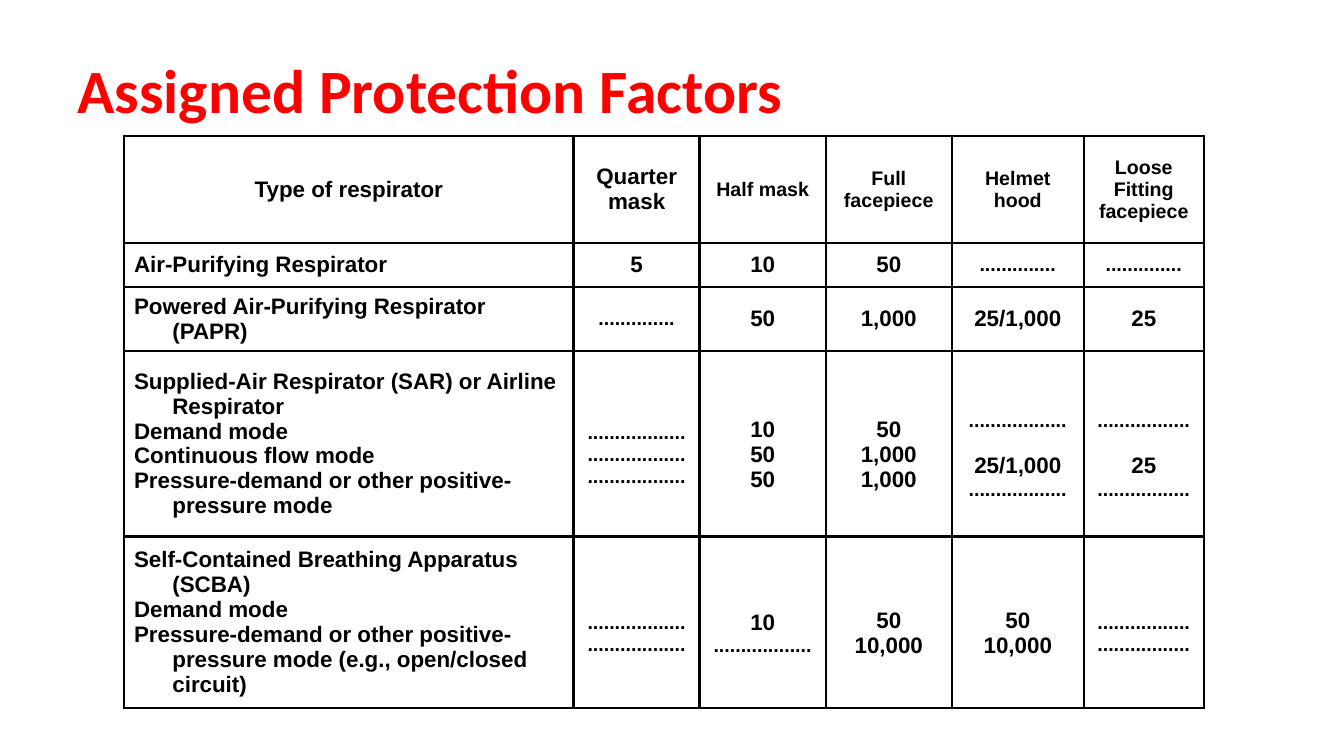
from pptx import Presentation
from pptx.dml.color import RGBColor
from pptx.enum.text import MSO_ANCHOR as Anchor, PP_ALIGN as Align
from pptx.oxml import parse_xml
from pptx.oxml.ns import nsdecls
from pptx.util import Inches, Pt

# Content: the lines of a cell are parted by "\n", an empty line is a gap
TITLE = "Assigned Protection Factors"
HEADERS = ["Type of respirator", "Quarter\nmask", "Half mask", "Full\nfacepiece",
           "Helmet\nhood", "Loose\nFitting\nfacepiece"]
SHORT, MEDIUM, LONG = "." * 14, "." * 17, "." * 18
RESPIRATORS = [
    ["Air-Purifying Respirator", "5", "10", "50", SHORT, SHORT],
    ["Powered Air-Purifying Respirator (PAPR)", SHORT, "50", "1,000", "25/1,000", "25"],
    ["Supplied-Air Respirator (SAR) or Airline Respirator\nDemand mode\n"
     "Continuous flow mode\nPressure-demand or other positive-pressure mode",
     f"{LONG}\n{LONG}\n{LONG}", "10\n50\n50", "50\n1,000\n1,000",
     f"{LONG}\n\n25/1,000\n{LONG}", f"{MEDIUM}\n\n25\n{MEDIUM}"],
    ["Self-Contained Breathing Apparatus (SCBA)\nDemand mode\n"
     "Pressure-demand or other positive-pressure mode (e.g., open/closed circuit)",
     f"{LONG}\n{LONG}", f"10\n{LONG}", "50\n10,000", "50\n10,000",
     f"{MEDIUM}\n{MEDIUM}"],
]

COLORS = {"title": "FF0000", "text": "000000", "border": "000000", "cell": "FFFFFF"}
COLUMN_WIDTHS = [4.46, 1.25, 1.25, 1.25, 1.31, 1.19]
ROW_HEIGHTS = [1.06, 0.44, 0.61, 1.84, 1.66]
TABLE_LEFT, TABLE_TOP = 1.23, 1.35
LINE_GAP = 0.22  # height of one line of small text
HANGING = 0.38
LARGE, SMALL = 16, 14


def write(frame, text, size_of, font="Arial", color="text", align=Align.LEFT,
          hanging=0, spacing=None):
    """Fill a text frame, one paragraph a line; size_of gives a line's size."""
    frame.word_wrap = True
    paragraph, gap = frame.paragraphs[0], 0
    for number, line in enumerate(text.split("\n")):
        if not line:
            gap += LINE_GAP
            continue
        if number:
            paragraph = frame.add_paragraph()
        paragraph.alignment = align
        paragraph.line_spacing = spacing
        if gap:
            paragraph.space_before = Inches(gap)
            gap = 0
        if hanging:
            properties = paragraph._p.get_or_add_pPr()
            properties.set("marL", str(Inches(hanging)))
            properties.set("indent", str(-Inches(hanging)))
        run = paragraph.add_run()
        run.text = line
        run.font.name, run.font.size, run.font.bold = font, Pt(size_of(line)), True
        run.font.color.rgb = RGBColor.from_string(COLORS[color])


def style_cell(cell):
    properties = cell._tc.get_or_add_tcPr()
    for side in "LRTB":
        properties.append(parse_xml(
            f'<a:ln{side} {nsdecls("a")} w="{Pt(2)}"><a:solidFill>'
            f'<a:srgbClr val="{COLORS["border"]}"/></a:solidFill></a:ln{side}>'))
    cell.fill.solid()
    cell.fill.fore_color.rgb = RGBColor.from_string(COLORS["cell"])
    cell.vertical_anchor = Anchor.MIDDLE


def main():
    presentation = Presentation()
    presentation.slide_width, presentation.slide_height = Inches(13.33), Inches(7.5)
    slide = presentation.slides.add_slide(presentation.slide_layouts[6])

    # Title
    title = slide.shapes.add_textbox(Inches(0.67), Inches(0.3), Inches(12), Inches(1.25))
    title.text_frame.vertical_anchor = Anchor.MIDDLE
    write(title.text_frame, TITLE, lambda line: 44, font="Calibri", color="title",
          spacing=0.9)

    # Table grid
    rows = [HEADERS] + RESPIRATORS
    table = slide.shapes.add_table(
        len(rows), len(HEADERS), Inches(TABLE_LEFT), Inches(TABLE_TOP),
        Inches(sum(COLUMN_WIDTHS)), Inches(sum(ROW_HEIGHTS))).table
    table.first_row = table.horz_banding = False
    for column, width in zip(table.columns, COLUMN_WIDTHS):
        column.width = Inches(width)
    for row, height in zip(table.rows, ROW_HEIGHTS):
        row.height = Inches(height)

    # Cells: dots and the narrow headers are small, labels hang
    for row_index, row in enumerate(rows):
        for column_index, text in enumerate(row):
            cell = table.cell(row_index, column_index)
            style_cell(cell)
            header, label = row_index == 0, column_index == 0
            if "\n" in row[0] and not label:
                cell.margin_top = Inches(0.05 + LINE_GAP)  # level with the modes
            small_header = header and column_index > 1
            write(cell.text_frame, text,
                  lambda line: SMALL if small_header or line[0] == "." else LARGE,
                  align=Align.LEFT if label and not header else Align.CENTER,
                  hanging=HANGING if label else 0)

    presentation.save("out.pptx")


if __name__ == "__main__":
    main()
